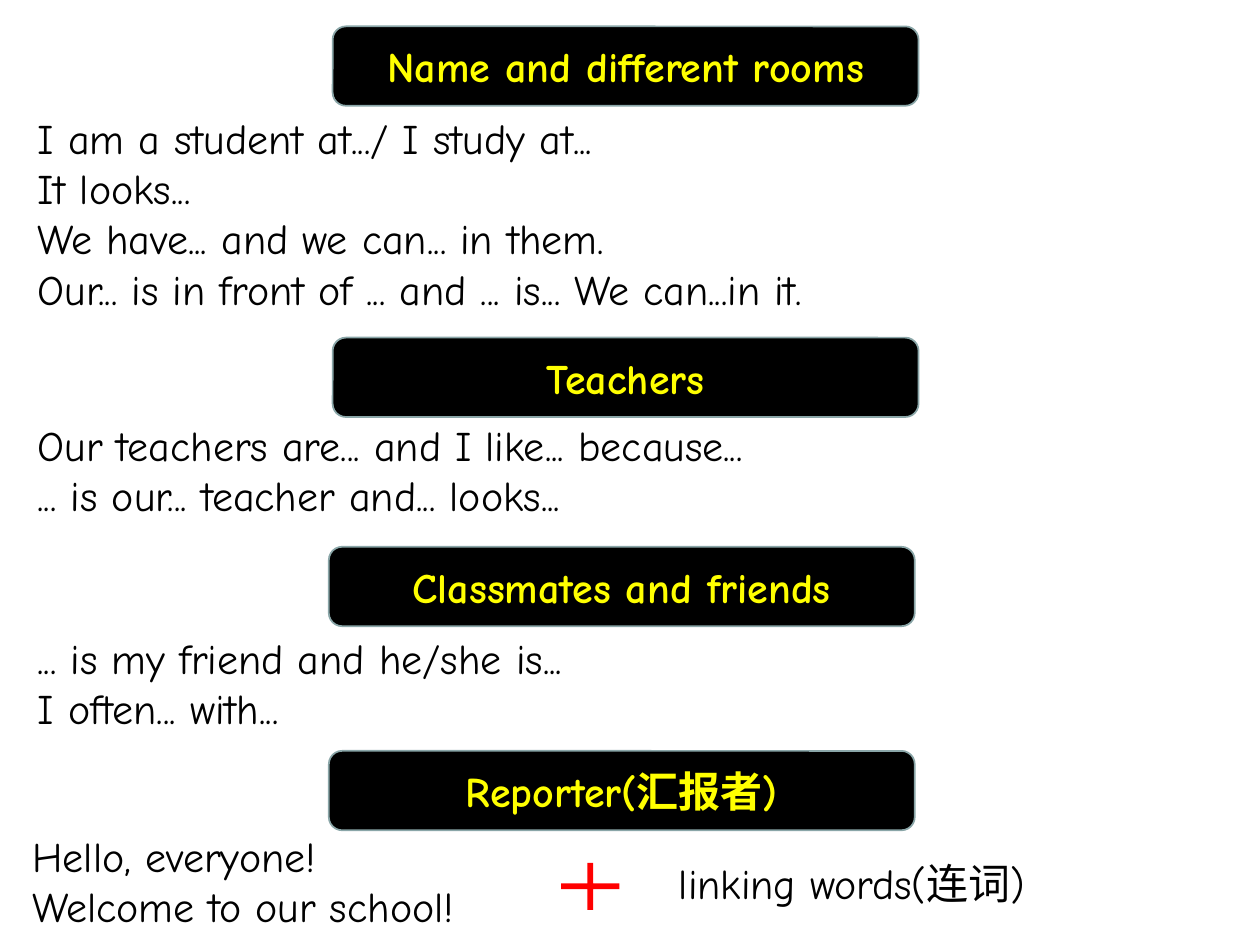
import pptx
import pptx.dml.color
import pptx.enum.shapes
import pptx.enum.text
import pptx.util
from pptx.util import Inches

FONT = "Comic Neue"
SHAPES = pptx.enum.shapes.MSO_SHAPE
ALIGN = pptx.enum.text.PP_ALIGN


def color(value):
    return pptx.dml.color.RGBColor.from_string(value)


def write(shape, text, size=24, fill="000000", bold=False, align=ALIGN.LEFT,
          anchor=pptx.enum.text.MSO_ANCHOR.TOP):
    frame = shape.text_frame
    frame.word_wrap = True
    frame.vertical_anchor = anchor
    frame.text = text
    for paragraph in frame.paragraphs:
        paragraph.alignment = align
        paragraph.font.name = FONT
        paragraph.font.size = pptx.util.Pt(size)
        paragraph.font.bold = bold
        paragraph.font.color.rgb = color(fill)


presentation = pptx.Presentation()
presentation.slide_width = Inches(10)
presentation.slide_height = Inches(7.5)
slide = presentation.slides.add_slide(presentation.slide_layouts[6])

# Section headings: left, top, text
headings = [
    (2.64, 0.21, "Name and different rooms"),
    (2.64, 2.68, "Teachers"),
    (2.61, 4.34, "Classmates and friends"),
    (2.61, 5.96, "Reporter(汇报者)"),
]
for left, top, text in headings:
    heading = slide.shapes.add_shape(
        SHAPES.ROUNDED_RECTANGLE, Inches(left), Inches(top), Inches(4.65), Inches(0.63))
    heading.shadow.inherit = False
    heading.fill.solid()
    heading.fill.fore_color.rgb = color("000000")
    heading.line.color.rgb = color("8AA6A8")
    heading.line.width = pptx.util.Pt(1)
    write(heading, text, fill="FFFF00", bold=True, align=ALIGN.CENTER,
          anchor=pptx.enum.text.MSO_ANCHOR.MIDDLE)

# Sentence patterns: left, top, width, height, lines
patterns = [
    (0.2, 0.84, 9.06, 1.72, [
        "I am a student at.../ I study at...",
        "It looks...",
        "We have... and we can... in them.",
        "Our... is in front of ... and ... is... We can...in it.",
    ]),
    (0.2, 3.28, 8.66, 0.91, [
        "Our teachers are... and I like... because...",
        "... is our... teacher and... looks...",
    ]),
    (0.2, 4.97, 7.64, 0.91, [
        "... is my friend and he/she is...",
        "I often... with...",
    ]),
    (0.16, 6.54, 5, 0.91, ["Hello, everyone!", "Welcome to our school!"]),
    (5.29, 6.76, 5, 0.53, ["linking words(连词)"]),
]
for left, top, width, height, lines in patterns:
    box = slide.shapes.add_textbox(Inches(left), Inches(top), Inches(width), Inches(height))
    write(box, "\n".join(lines))

# Plus sign before the linking words
plus = slide.shapes.add_shape(
    SHAPES.MATH_PLUS, Inches(4.37), Inches(6.78), Inches(0.63), Inches(0.51))
plus.adjustments[0] = 0.09
plus.shadow.inherit = False
plus.fill.solid()
plus.fill.fore_color.rgb = color("FF0000")
plus.line.fill.background()

presentation.save("out.pptx")
